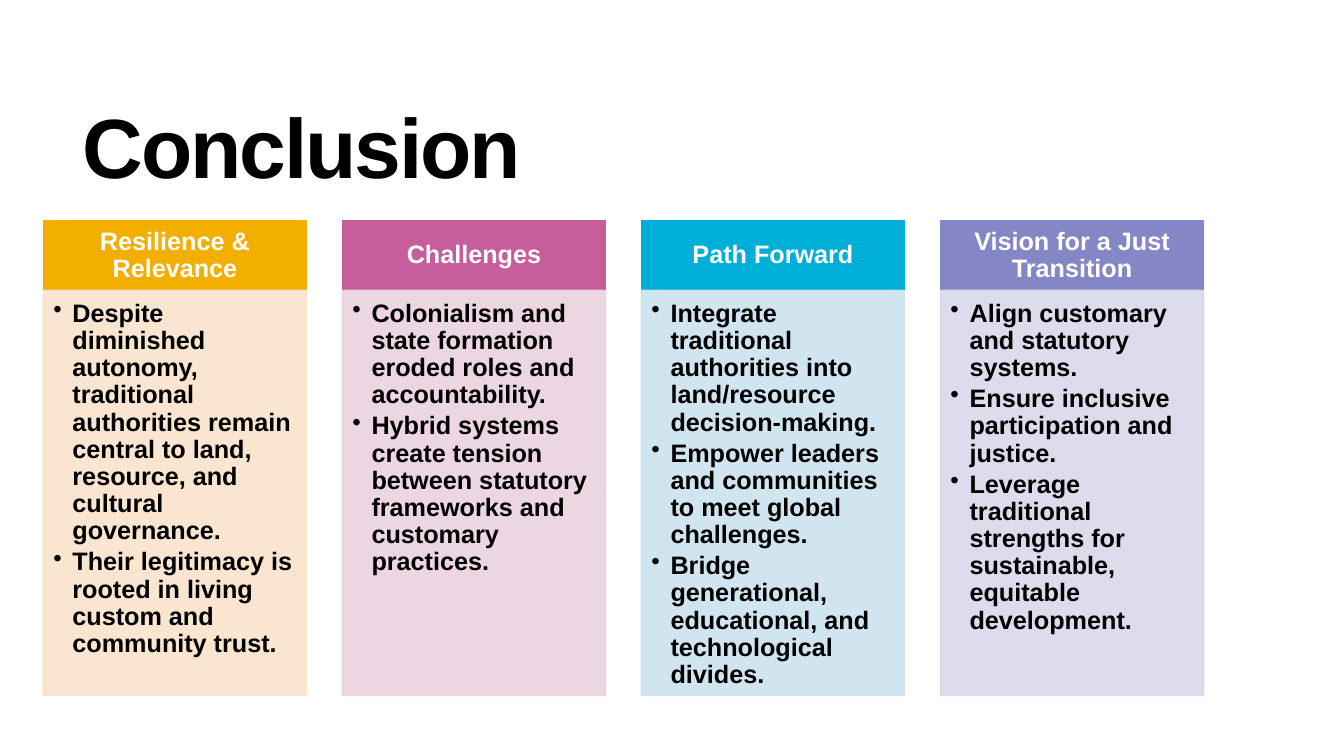
import lxml.etree
import pptx
import pptx.dml.color
import pptx.enum.shapes
import pptx.enum.text
import pptx.oxml.ns
import pptx.util

Inches = pptx.util.Inches
Pt = pptx.util.Pt
RGBColor = pptx.dml.color.RGBColor
ANCHOR = pptx.enum.text.MSO_ANCHOR
qn = pptx.oxml.ns.qn

BLACK = RGBColor(0x00, 0x00, 0x00)
WHITE = RGBColor(0xFF, 0xFF, 0xFF)
GOLD = RGBColor(0xF2, 0xAF, 0x00)
PALE_GOLD = RGBColor(0xFA, 0xE3, 0xCC)
PINK = RGBColor(0xC5, 0x5E, 0x9B)
PALE_PINK = RGBColor(0xEA, 0xD2, 0xDE)
CYAN = RGBColor(0x00, 0xAF, 0xD8)
PALE_CYAN = RGBColor(0xCC, 0xE3, 0xF0)
VIOLET = RGBColor(0x85, 0x86, 0xC6)
PALE_VIOLET = RGBColor(0xD9, 0xD9, 0xEA)

COLUMN_LEFT, COLUMN_PITCH, COLUMN_WIDTH = 0.43, 2.966, 2.61
HEADER_TOP, HEADER_HEIGHT, BODY_HEIGHT = 2.19, 0.69, 4.02
HANGING_INDENT = Inches(0.19)

COLUMNS = [
    ("Resilience & Relevance", GOLD, PALE_GOLD, [
        "Despite diminished autonomy, traditional authorities remain central to land, "
        "resource, and cultural governance.",
        "Their legitimacy is rooted in living custom and community trust."]),
    ("Challenges", PINK, PALE_PINK, [
        "Colonialism and state formation eroded roles and accountability.",
        "Hybrid systems create tension between statutory frameworks and customary practices."]),
    ("Path Forward", CYAN, PALE_CYAN, [
        "Integrate traditional authorities into land/resource decision-making.",
        "Empower leaders and communities to meet global challenges.",
        "Bridge generational, educational, and technological divides."]),
    ("Vision for a Just Transition", VIOLET, PALE_VIOLET, [
        "Align customary and statutory systems.",
        "Ensure inclusive participation and justice.",
        "Leverage traditional strengths for sustainable, equitable development."]),
]


def prepare_frame(shape, anchor, margins):
    """Set wrapping, anchor and left, top, right, bottom margins in inches."""
    frame = shape.text_frame
    frame.word_wrap = True
    frame.vertical_anchor = anchor
    (frame.margin_left, frame.margin_top,
     frame.margin_right, frame.margin_bottom) = map(Inches, margins)
    return frame


def add_bold_run(paragraph, text, size, color):
    run = paragraph.add_run()
    run.text = text
    run.font.name = "Arial"
    run.font.size = Pt(size)
    run.font.bold = True
    run.font.color.rgb = color
    return run


presentation = pptx.Presentation()
presentation.slide_width = Inches(13.33)
presentation.slide_height = Inches(7.5)
slide = presentation.slides.add_slide(presentation.slide_layouts[6])

title = slide.shapes.add_textbox(Inches(0.82), Inches(0.34), Inches(5.85), Inches(2.38))
paragraph = prepare_frame(title, ANCHOR.MIDDLE, (0, 0, 0, 0)).paragraphs[0]
paragraph.line_spacing = 0.8
title_run = add_bold_run(paragraph, "Conclusion", 60, BLACK)
title_run.font._element.set("spc", "-150")

for column, (heading, strong_color, pale_color, points) in enumerate(COLUMNS):
    left = Inches(COLUMN_LEFT + column * COLUMN_PITCH)
    header, body = [
        slide.shapes.add_shape(pptx.enum.shapes.MSO_SHAPE.RECTANGLE, left, Inches(top),
                               Inches(COLUMN_WIDTH), Inches(height))
        for top, height in ((HEADER_TOP, HEADER_HEIGHT),
                            (HEADER_TOP + HEADER_HEIGHT, BODY_HEIGHT))]
    for shape, color in ((header, strong_color), (body, pale_color)):
        shape.shadow.inherit = False
        shape.fill.solid()
        shape.fill.fore_color.rgb = color
        shape.line.color.rgb = color
        shape.line.width = Pt(1)
    for color_element in body._element.spPr.iter(qn("a:srgbClr")):
        lxml.etree.SubElement(color_element, qn("a:alpha"), val="90000")

    paragraph = prepare_frame(header, ANCHOR.MIDDLE, (0.14, 0.08, 0.14, 0.08)).paragraphs[0]
    paragraph.alignment = pptx.enum.text.PP_ALIGN.CENTER
    paragraph.line_spacing = 0.9
    add_bold_run(paragraph, heading, 18, WHITE)

    frame = prepare_frame(body, ANCHOR.TOP, (0.1, 0.1, 0.14, 0.16))
    for number, point in enumerate(points):
        paragraph = frame.add_paragraph() if number else frame.paragraphs[0]
        paragraph.alignment = pptx.enum.text.PP_ALIGN.LEFT
        paragraph.line_spacing = 0.9
        paragraph.space_after = Pt(2.7)
        properties = paragraph._p.get_or_add_pPr()
        properties.set("marL", str(HANGING_INDENT))
        properties.set("indent", str(-HANGING_INDENT))
        lxml.etree.SubElement(properties, qn("a:buChar"), char="•")
        add_bold_run(paragraph, point, 18, BLACK)

presentation.save("out.pptx")
